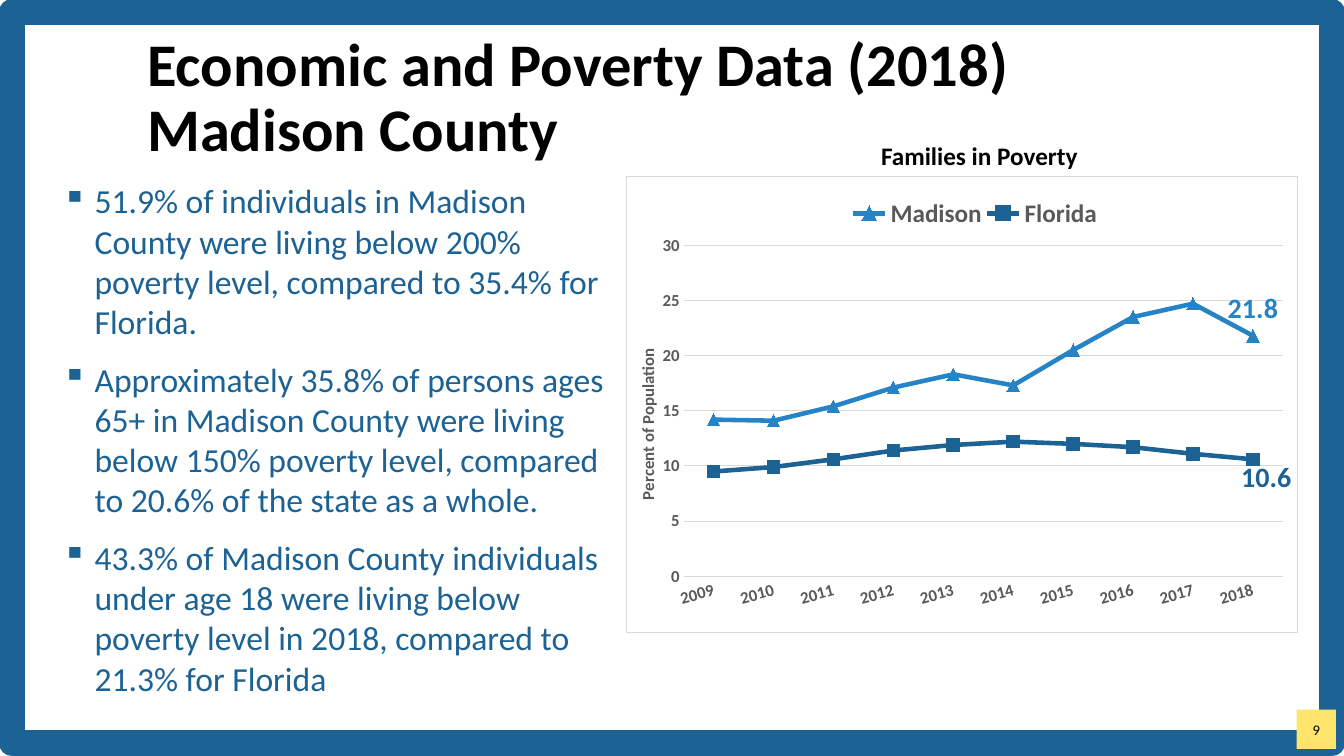
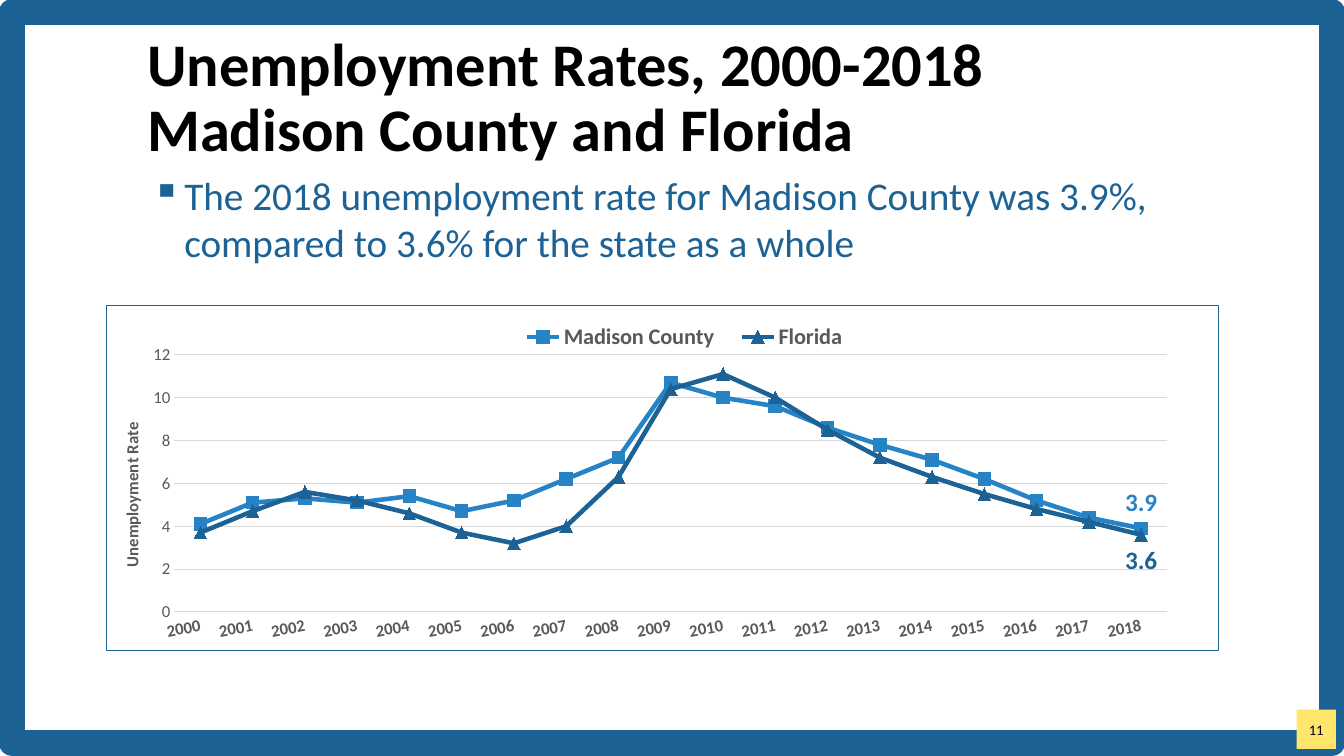
from dataclasses import dataclass, field

from pptx import Presentation
from pptx.chart.data import CategoryChartData
from pptx.dml.color import RGBColor as Color
from pptx.enum.chart import XL_CHART_TYPE as ChartType
from pptx.enum.chart import XL_LABEL_POSITION as LabelPosition
from pptx.enum.chart import XL_LEGEND_POSITION as LegendPosition
from pptx.enum.chart import XL_MARKER_STYLE as Marker
from pptx.enum.chart import XL_TICK_MARK as TickMark
from pptx.enum.shapes import MSO_SHAPE as ShapeType
from pptx.enum.text import MSO_ANCHOR as Anchor
from pptx.enum.text import MSO_AUTO_SIZE as AutoSize
from pptx.enum.text import PP_ALIGN as Align
from pptx.oxml import parse_xml
from pptx.oxml.ns import nsdecls, qn
from pptx.oxml.xmlchemy import OxmlElement
from pptx.util import Inches, Pt


@dataclass(frozen=True)
class Theme:
    font: str = "Calibri"
    navy: str = "1C6294"
    blue: str = "2683C6"
    yellow: str = "FFE56B"
    black: str = "000000"
    gray: str = "595959"
    grid: str = "D9D9D9"
    title_size: float = 43.2
    caption_size: float = 18
    axis_size: float = 12
    badge_size: float = 10.5
    frame_width: float = 19
    series_width: float = 3.25
    thin_width: float = 0.75


THEME = Theme()


@dataclass
class Series:
    name: str
    values: tuple
    color: str
    marker: Marker
    label_position: LabelPosition
    label_offset: tuple = None


@dataclass
class LineChart:
    box: tuple
    categories: range
    series: list
    value_title: str
    maximum: float
    step: float
    plot_layout: tuple
    legend_layout: tuple
    title_layout: tuple
    legend_size: float
    label_size: float
    label_angle: float
    border: str = field(default=THEME.grid)
    bold_values: bool = False


def set_font(font, size, color=THEME.black, bold=False):
    font.name = THEME.font
    font.size = Pt(size)
    font.bold = bold
    font.color.rgb = Color.from_string(color)


def set_line(line, color, width):
    line.color.rgb = Color.from_string(color)
    line.width = Pt(width)


def add_bullet(paragraph):
    properties = paragraph._p.get_or_add_pPr()
    properties.set("marL", str(Inches(0.37)))
    properties.set("indent", str(-Inches(0.32)))
    properties.append(parse_xml(
        f'<a:buClr {nsdecls("a")}><a:srgbClr val="{THEME.navy}"/></a:buClr>'))
    properties.append(parse_xml(f'<a:buChar {nsdecls("a")} char="▪"/>'))


def write_text(text_frame, *texts, size, color=THEME.black, bold=False, align=Align.LEFT,
               anchor=Anchor.TOP, wrap=True, bullet=False, space_after=0, line_spacing=1.0):
    text_frame.auto_size = AutoSize.NONE
    text_frame.word_wrap = wrap
    text_frame.vertical_anchor = anchor
    for index, text in enumerate(texts):
        paragraph = text_frame.add_paragraph() if index else text_frame.paragraphs[0]
        paragraph.text = text
        if bullet:
            add_bullet(paragraph)
        paragraph.alignment = align
        paragraph.space_after = Pt(space_after)
        paragraph.line_spacing = line_spacing
        for run in paragraph.runs:
            set_font(run.font, size, color, bold)


def add_text(slide, box, *texts, **text_format):
    shape = slide.shapes.add_textbox(*map(Inches, box))
    write_text(shape.text_frame, *texts, **text_format)


def add_rectangle(slide, box, fill=None, line=None):
    shape = slide.shapes.add_shape(ShapeType.RECTANGLE, *map(Inches, box))
    shape.shadow.inherit = False
    if fill:
        shape.fill.solid()
        shape.fill.fore_color.rgb = Color.from_string(fill)
    else:
        shape.fill.background()
    if line:
        set_line(shape.line, line, THEME.frame_width)
    else:
        shape.line.fill.background()
    return shape


def add_framed_slide(presentation, title, number):
    slide = presentation.slides.add_slide(presentation.slide_layouts[5])
    placeholder = slide.shapes.title
    placeholder.left, placeholder.top = Inches(1.36), Inches(0.46)
    placeholder.width, placeholder.height = Inches(11.5), Inches(1.05)
    write_text(placeholder.text_frame, title, size=THEME.title_size, bold=True,
               anchor=Anchor.MIDDLE, line_spacing=0.9)
    add_rectangle(slide, (0.12, 0.12, 13.09, 7.25), line=THEME.navy)
    badge = add_rectangle(slide, (12.86, 7.04, 0.39, 0.39), fill=THEME.yellow)
    write_text(badge.text_frame, str(number), size=THEME.badge_size,
               align=Align.CENTER, anchor=Anchor.MIDDLE)
    return slide


def set_layout(parent, index, position, inner=False, edge=True):
    for old_layout in parent.findall(qn("c:layout")):
        parent.remove(old_layout)
    settings = [("layoutTarget", "inner")] if inner else []
    if edge:
        settings += [("xMode", "edge"), ("yMode", "edge")]
    settings += zip("xywh", position)
    layout = OxmlElement("c:layout")
    manual = OxmlElement("c:manualLayout")
    layout.append(manual)
    for name, value in settings:
        element = OxmlElement(f"c:{name}")
        element.set("val", str(value))
        manual.append(element)
    parent.insert(index, layout)


def rotate_text(body_properties, degrees):
    body_properties.set("rot", str(int(degrees * 60000)))
    body_properties.set("vert", "horz")


def style_axes(chart, design):
    category_axis, value_axis = chart.category_axis, chart.value_axis
    for axis, bold in ((category_axis, True), (value_axis, design.bold_values)):
        axis.major_tick_mark = axis.minor_tick_mark = TickMark.NONE
        set_font(axis.tick_labels.font, THEME.axis_size, THEME.gray, bold)
    set_line(category_axis.format.line, THEME.grid, THEME.thin_width)
    rotate_text(category_axis._element.xpath("c:txPr/a:bodyPr")[0], design.label_angle)
    value_axis.minimum_scale, value_axis.maximum_scale = 0, design.maximum
    value_axis.major_unit = design.step
    value_axis.format.line.fill.background()
    set_line(value_axis.major_gridlines.format.line, THEME.grid, THEME.thin_width)
    write_text(value_axis.axis_title.text_frame, design.value_title,
               size=THEME.axis_size, color=THEME.gray, bold=True, align=Align.CENTER)
    title = value_axis._element.xpath("c:title")[0]
    rotate_text(title.xpath(".//a:bodyPr")[0], -90)
    set_layout(title, 1, design.title_layout)


def style_series(series, design, label_size):
    color = Color.from_string(design.color)
    series.smooth = False
    set_line(series.format.line, design.color, THEME.series_width)
    series.marker.style = design.marker
    series.marker.size = 9
    series.marker.format.fill.solid()
    series.marker.format.fill.fore_color.rgb = color
    series.marker.format.line.color.rgb = color
    series.data_labels.show_value = False
    label = series.points[len(design.values) - 1].data_label
    set_font(label.font, label_size, design.color, True)
    label.position = design.label_position
    if design.label_offset:
        label_element = series._element.xpath("c:dLbls/c:dLbl")[0]
        set_layout(label_element, 1, design.label_offset, edge=False)


def add_line_chart(slide, design):
    data = CategoryChartData()
    data.categories = [str(year) for year in design.categories]
    for series in design.series:
        data.add_series(series.name, series.values)
    chart = slide.shapes.add_chart(
        ChartType.LINE_MARKERS, *map(Inches, design.box), data).chart
    set_font(chart.font, 10)
    chart.has_title = False
    chart.plots[0].vary_by_categories = False
    chart.has_legend = True
    chart.legend.position = LegendPosition.BOTTOM
    chart.legend.include_in_layout = False
    set_font(chart.legend.font, design.legend_size, THEME.gray, True)
    style_axes(chart, design)
    for series, series_design in zip(chart.plots[0].series, design.series):
        style_series(series, series_design, design.label_size)
    chart_element = chart._chartSpace.xpath("c:chart")[0]
    set_layout(chart_element.xpath("c:plotArea")[0], 0, design.plot_layout, inner=True)
    set_layout(chart_element.xpath("c:legend")[0], 1, design.legend_layout)
    chart_element.addnext(parse_xml(
        f'<c:spPr {nsdecls("c", "a")}><a:noFill/><a:ln w="{Pt(THEME.thin_width)}">'
        f'<a:solidFill><a:srgbClr val="{design.border}"/></a:solidFill></a:ln></c:spPr>'))


def build_poverty_slide(presentation):
    slide = add_framed_slide(
        presentation, "Economic and Poverty Data (2018)\vMadison County", 9)
    add_text(
        slide, (0.47, 1.74, 5.74, 5.4),
        "51.9% of individuals in Madison County were living below 200% poverty level, "
        "compared to 35.4% for Florida.",
        "Approximately 35.8% of persons ages 65+ in Madison County were living below "
        "150% poverty level, compared to 20.6% of the state as a whole.",
        "43.3% of Madison County individuals under age 18 were living below poverty "
        "level in 2018, compared to 21.3% for Florida",
        size=24, color=THEME.navy, bullet=True, space_after=12)
    add_line_chart(slide, LineChart(
        box=(6.21, 1.75, 6.66, 4.53),
        categories=range(2009, 2019),
        series=[
            Series("Madison", (14.2, 14.1, 15.4, 17.1, 18.3, 17.3, 20.5, 23.5, 24.7, 21.8),
                   THEME.blue, Marker.TRIANGLE, LabelPosition.ABOVE),
            Series("Florida", (9.5, 9.9, 10.6, 11.4, 11.9, 12.2, 12, 11.7, 11.1, 10.6),
                   THEME.navy, Marker.SQUARE, LabelPosition.BELOW, (0.02, -0.02)),
        ],
        value_title="Percent of Population", maximum=30, step=5,
        plot_layout=(0.085, 0.15, 0.894, 0.727),
        legend_layout=(0.33, 0.04, 0.38, 0.08),
        title_layout=(0.01, 0.37),
        legend_size=18, label_size=20, label_angle=-15, bold_values=True))
    add_text(slide, (8.64, 1.34, 2.26, 0.4), "Families in Poverty",
             size=THEME.caption_size, bold=True, wrap=False)


def build_unemployment_slide(presentation):
    slide = add_framed_slide(
        presentation, "Unemployment Rates, 2000-2018\vMadison County and Florida", 11)
    add_text(
        slide, (1.36, 1.65, 11.15, 1.23),
        "The 2018 unemployment rate for Madison County was 3.9%,\v"
        "compared to 3.6% for the state as a whole",
        size=28, color=THEME.navy, bullet=True, space_after=24)
    add_line_chart(slide, LineChart(
        box=(1.05, 3.03, 11.04, 3.43),
        categories=range(2000, 2019),
        series=[
            Series("Madison County",
                   (4.1, 5.1, 5.3, 5.1, 5.4, 4.7, 5.2, 6.2, 7.2, 10.7,
                    10, 9.6, 8.6, 7.8, 7.1, 6.2, 5.2, 4.4, 3.9),
                   THEME.blue, Marker.SQUARE, LabelPosition.ABOVE),
            Series("Florida",
                   (3.7, 4.7, 5.6, 5.2, 4.6, 3.7, 3.2, 4, 6.3, 10.4,
                    11.1, 10, 8.5, 7.2, 6.3, 5.5, 4.8, 4.2, 3.6),
                   THEME.navy, Marker.TRIANGLE, LabelPosition.BELOW),
        ],
        value_title="Unemployment Rate", maximum=12, step=2,
        plot_layout=(0.061, 0.142, 0.893, 0.746),
        legend_layout=(0.36, 0.05, 0.32, 0.08),
        title_layout=(0.01, 0.33),
        legend_size=16, label_size=18, label_angle=-10, border=THEME.navy))


def main():
    presentation = Presentation()
    presentation.slide_width, presentation.slide_height = Inches(13.33), Inches(7.5)
    build_poverty_slide(presentation)
    build_unemployment_slide(presentation)
    presentation.save("out.pptx")


if __name__ == "__main__":
    main()
